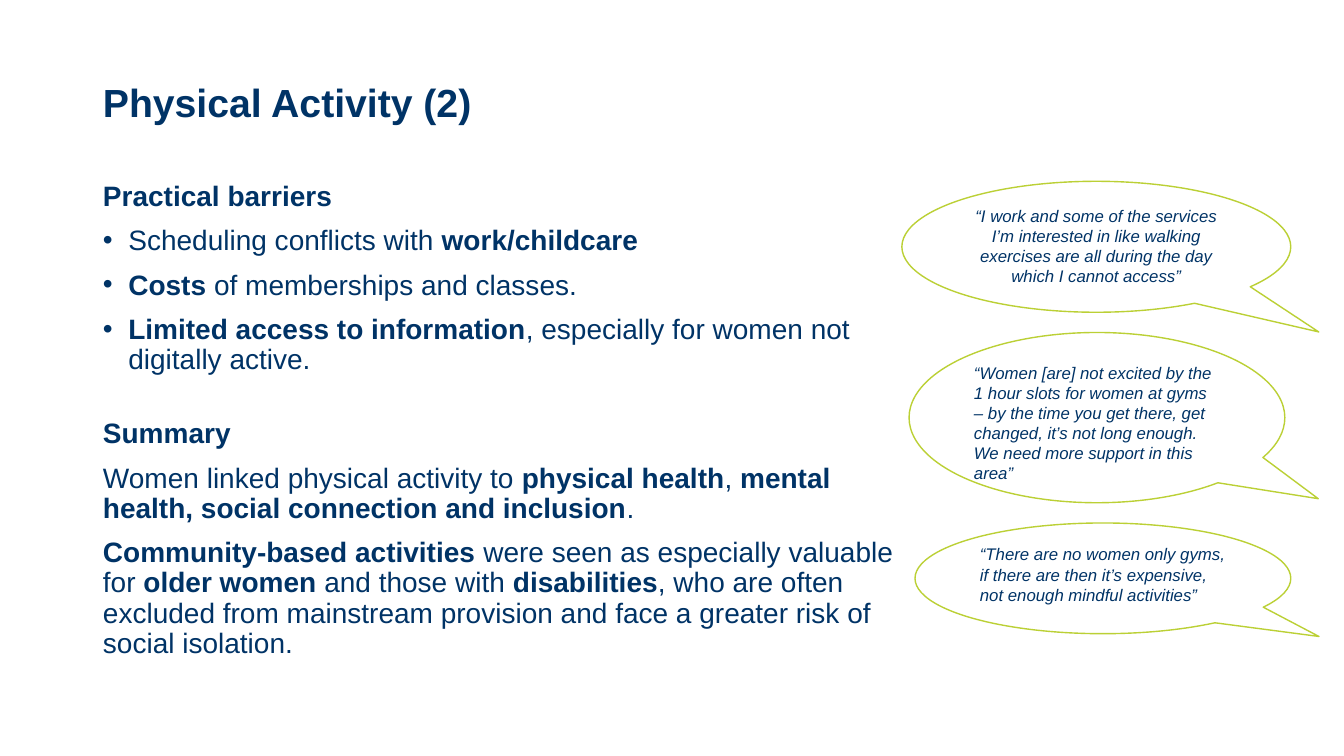
"""Build the slide on physical activity barriers with quoted speech bubbles."""
from lxml import etree
from pptx import Presentation
from pptx import util as u
from pptx.dml.color import RGBColor
from pptx.enum import shapes, text
from pptx.oxml import ns

NAVY = RGBColor(0x00, 0x33, 0x66)
LIME = RGBColor(0xBB, 0xD0, 0x35)

TITLE = "Physical Activity (2)"
HEADING, BULLET, PLAIN = "heading", "bullet", "plain"
SPACE_BEFORE, SECTION_SPACE = 10, 31.5
BODY = [
    (HEADING, "**Practical barriers**"),
    (BULLET, "Scheduling conflicts with **work/childcare**"),
    (BULLET, "**Costs** of memberships and classes."),
    (BULLET, "**Limited access to information**, especially for women not digitally active."),
    (HEADING, "**Summary**"),
    (PLAIN, "Women linked physical activity to **physical health**, "
            "**mental health, social connection and inclusion**."),
    (PLAIN, "**Community-based activities **were seen as especially valuable for "
            "**older women **and those with **disabilities**, who are often excluded from "
            "mainstream provision and face a greater risk of social isolation."),
]
QUOTES = [
    ((22.73, 4.57, 9.8, 3.3), (0.572, 0.65), text.PP_ALIGN.CENTER,
     "“I work and some of the services I’m interested in like walking exercises "
     "are all during the day which I cannot access”"),
    ((22.91, 8.38, 9.47, 4.29), (0.589, 0.476), text.PP_ALIGN.LEFT,
     "“Women [are] not excited by the 1 hour slots for women at gyms – by the time "
     "you get there, get changed, it’s not long enough. We need more support in this area”"),
    ((23.06, 13.18, 9.47, 2.79), (0.575, 0.525), text.PP_ALIGN.LEFT,
     "“There are no women only gyms, if there are then it’s expensive, "
     "not enough mindful activities”"),
]


def apply(target, values):
    for name, value in values.items():
        setattr(target, name, value)


class SlideBuilder:
    def __init__(self, presentation):
        self.slide = presentation.slides.add_slide(presentation.slide_layouts[1])
        self.font = {"name": "Arial", "bold": False, "italic": False}

    def place(self, shape, box):
        apply(shape, dict(zip(("left", "top", "width", "height"), map(u.Cm, box))))

    def frame(self, shape, anchor):
        apply(shape.text_frame, {"word_wrap": True, "vertical_anchor": anchor,
                                 "auto_size": text.MSO_AUTO_SIZE.NONE})
        return shape.text_frame

    def add_words(self, paragraph, words, size, **style):
        for index, piece in enumerate(words.split("**")):
            if piece:
                run = paragraph.add_run()
                run.text = piece
                values = {**self.font, "bold": index % 2 == 1, "size": u.Pt(size), **style}
                apply(run.font, values)
                run.font.color.rgb = NAVY

    def bullet(self, paragraph, shown):
        properties = paragraph._p.get_or_add_pPr()
        indent = u.Cm(0.64) if shown else 0
        properties.set("marL", str(indent))
        properties.set("indent", str(-indent))
        if shown:
            etree.SubElement(properties, ns.qn("a:buFont"), typeface="Arial")
            etree.SubElement(properties, ns.qn("a:buChar"), char="•")
        else:
            etree.SubElement(properties, ns.qn("a:buNone"))

    def title(self, words, box):
        shape = self.slide.shapes.title
        self.place(shape, box)
        paragraph = self.frame(shape, text.MSO_ANCHOR.MIDDLE).paragraphs[0]
        apply(paragraph, {"alignment": text.PP_ALIGN.LEFT, "line_spacing": 0.9})
        self.add_words(paragraph, words, 28, bold=True)

    def body(self, items, box):
        shape = self.slide.placeholders[1]
        self.place(shape, box)
        frame = self.frame(shape, text.MSO_ANCHOR.TOP)
        for index, (kind, words) in enumerate(items):
            paragraph = frame.add_paragraph() if index else frame.paragraphs[0]
            space = SECTION_SPACE if kind == HEADING else SPACE_BEFORE
            self.bullet(paragraph, kind == BULLET)
            apply(paragraph, {"alignment": text.PP_ALIGN.LEFT, "line_spacing": 0.9,
                              "space_before": u.Pt(space if index else 0)})
            self.add_words(paragraph, words, 20)

    def speech_bubble(self, box, tail, alignment, words):
        shape = self.slide.shapes.add_shape(
            shapes.MSO_SHAPE.OVAL_CALLOUT, *map(u.Cm, box))
        shape.shadow.inherit = False
        shape.fill.background()
        shape.line.color.rgb = LIME
        shape.line.width = u.Pt(1)
        for index, value in enumerate(tail):
            shape.adjustments[index] = value
        paragraph = self.frame(shape, text.MSO_ANCHOR.TOP).paragraphs[0]
        paragraph.alignment = alignment
        self.add_words(paragraph, words, 12, italic=True)


def main():
    presentation = Presentation()
    apply(presentation, {"slide_width": u.Cm(33.87), "slide_height": u.Cm(19.05)})
    builder = SlideBuilder(presentation)
    builder.title(TITLE, (2.34, 0.79, 27.15, 3.68))
    builder.body(BODY, (2.34, 4.47, 21.13, 8.59))
    for quote in QUOTES:
        builder.speech_bubble(*quote)
    presentation.save("out.pptx")


if __name__ == "__main__":
    main()
